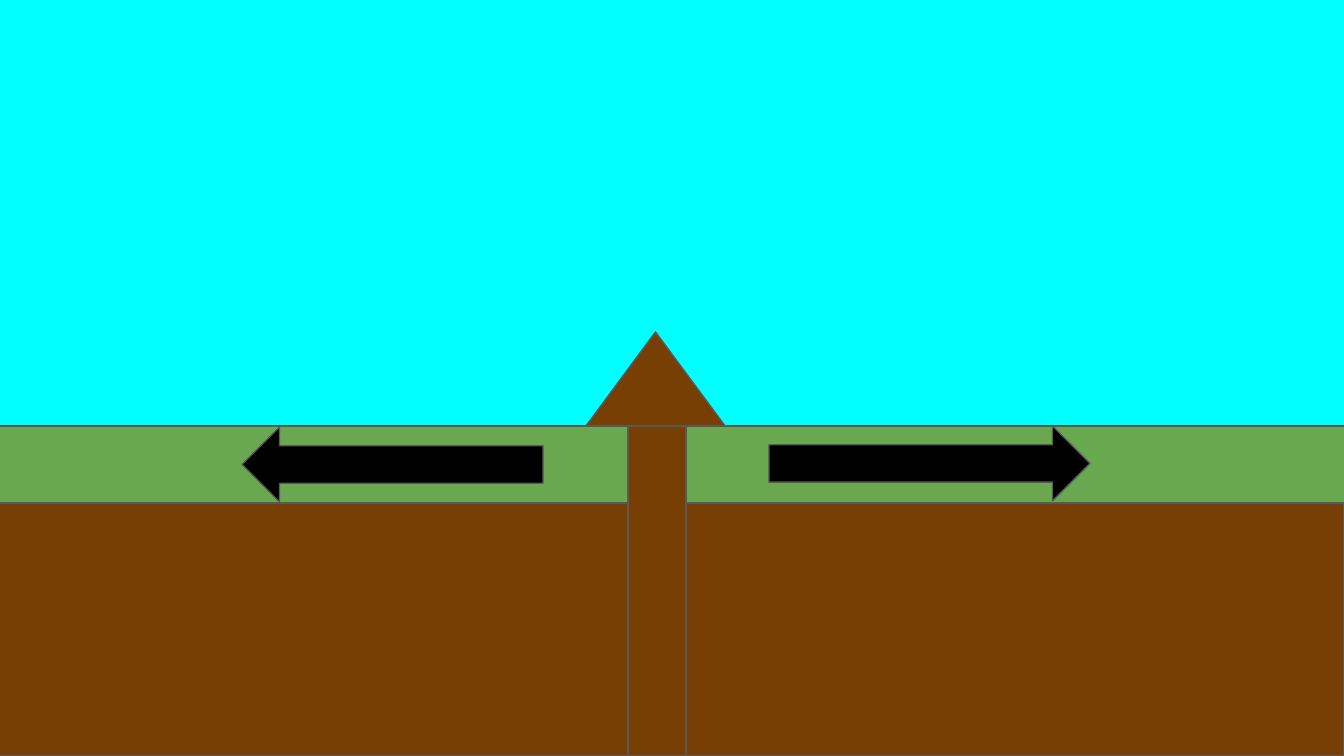
import pptx
import pptx.util
import pptx.dml.color
import pptx.enum.shapes

SCALE = 914400 / 134.4
KIND = pptx.enum.shapes.MSO_SHAPE
EARTH, GRASS, SKY = "783F04", "6AA84F", "00FFFF"
BLACK, EDGE = "000000", "595959"


def px(num):
    """Turn pixels into EMU."""
    return pptx.util.Emu(round(num * SCALE))


def paint(fill, color):
    """Give a fill one solid hex color."""
    fill.solid()
    fill.fore_color.rgb = pptx.dml.color.RGBColor.from_string(color)


def draw(slide, kind, box, color):
    """Add a filled shape with a thin grey edge."""
    shape = slide.shapes.add_shape(kind, *map(px, box))
    shape.shadow.inherit = False
    paint(shape.fill, color)
    paint(shape.line.fill, EDGE)
    shape.line.width = pptx.util.Pt(0.75)


def main():
    """Build the slide of a ridge whose two sides move apart."""
    deck = pptx.Presentation()
    deck.slide_width, deck.slide_height = px(1344), px(756)
    slide = deck.slides.add_slide(deck.slide_layouts[6])
    paint(slide.background.fill, SKY)
    draw(slide, KIND.RECTANGLE, (-4, 443, 1348, 313), EARTH)
    draw(slide, KIND.RECTANGLE, (-3, 426, 1348, 77), GRASS)
    draw(slide, KIND.RIGHT_ARROW, (769, 426, 321, 75), BLACK)
    draw(slide, KIND.LEFT_ARROW, (242, 427, 301, 75), BLACK)
    draw(slide, KIND.FLOWCHART_PROCESS, (628, 426, 58, 330), EARTH)
    draw(slide, KIND.ISOSCELES_TRIANGLE, (586, 332, 139, 94), EARTH)
    deck.save("out.pptx")


if __name__ == "__main__":
    main()
